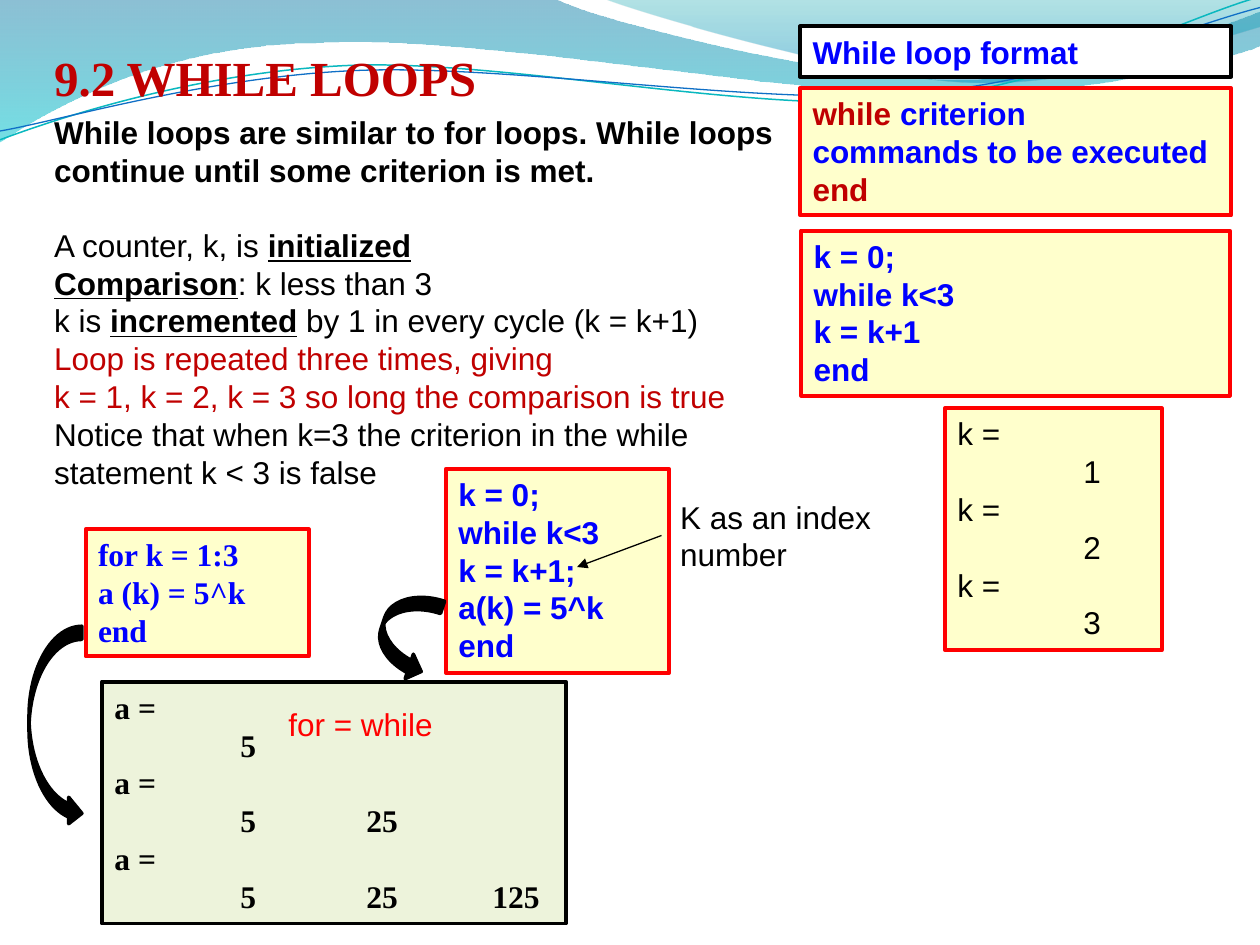
from lxml import etree
from pptx import Presentation
from pptx.dml.color import RGBColor
from pptx.enum.shapes import MSO_CONNECTOR, MSO_SHAPE
from pptx.enum.text import MSO_ANCHOR, MSO_AUTO_SIZE, PP_ALIGN
from pptx.oxml.ns import qn
from pptx.util import Inches, Pt

BLACK, BLUE, RED, DARK_RED = "000000", "0000FF", "FF0000", "C00000"
YELLOW, GREEN, WHITE = "FFFFCC", "EDF3DB", "FFFFFF"
SANS, SERIF = "Arial", "Times New Roman"

BOLD = {"bold": True}
KEYWORD = {"bold": True, "underline": True}
DARK = {"color": DARK_RED}

# A paragraph is a string or a list of (text, format) runs.
TITLE = ["9.2 WHILE LOOPS"]
BODY = [
    [("While loops are similar to for loops. While loops continue until some criterion is met.", BOLD)],
    [("A counter, k, is ", {}), ("initialized", KEYWORD)],
    [("Comparison", KEYWORD), (": k less than 3", {})],
    [("k is ", {}), ("incremented", KEYWORD), (" by 1 in every cycle (k = k+1)", {})],
    [("Loop is repeated three times, giving", DARK)],
    [("k = 1, k = 2, k = 3 so long the comparison is true", DARK)],
    "Notice that when k=3 the criterion in the while statement k < 3 is false",
]
CODE = {"name": SANS, "color": BLUE, "bold": True}
FORMAT = [[("while ", DARK), ("criterion", {})], "commands to be executed", [("end", DARK)]]

# left, top, width, height, fill, line, base format, alignment, paragraphs
BOXES = [
    (6.35, 0.7, 3.42, 1.01, YELLOW, RED, CODE, PP_ALIGN.LEFT, FORMAT),
    (6.36, 1.83, 3.4, 1.31, YELLOW, RED, CODE, PP_ALIGN.LEFT,
     ["k = 0;", "while k<3", "k = k+1", "end"]),
    (7.5, 3.24, 1.72, 1.92, YELLOW, RED, {}, PP_ALIGN.LEFT,
     ["k =", "\t1", "k =", "\t2", "k =", "\t3"]),
    (6.35, 0.21, 3.42, 0.4, WHITE, BLACK, CODE, PP_ALIGN.LEFT, ["While loop format"]),
    (3.54, 3.72, 1.77, 1.62, YELLOW, RED, CODE, PP_ALIGN.LEFT,
     ["k = 0;", "while k<3", "k = k+1;", "a(k) = 5^k", "end"]),
    (0.68, 4.2, 1.77, 1.01, YELLOW, RED, {**CODE, "name": SERIF}, PP_ALIGN.JUSTIFY,
     ["for k = 1:3 ", "a (k) = 5^k ", "end"]),
    (0.81, 5.41, 3.68, 1.92, GREEN, BLACK, {"name": SERIF, "bold": True}, PP_ALIGN.JUSTIFY,
     ["a = ", "\t5 ", "a = ", "\t5\t25 ", "a = ", "\t5\t25\t125"]),
]
LABELS = [
    (5.3, 3.9, 1.87, 0.71, BLACK, "K as an index number"),
    (2.19, 5.55, 1.87, 0.4, RED, "for = while"),
]
CURVED_ARROWS = [(0.23, 4.97, 0.42, 1.59, 0), (3.02, 4.69, 0.41, 0.69, 18.4)]

# Outlines: 2 numbers are a line to a point, 6 are a cubic curve.
BANDS = [
    ([(0, -0.01), (4.4, -0.01), (4.76, 0.17, 6.64, 0.63, 7.58, 0.63),
      (8.53, 0.63, 9.58, 0.26, 10, 0.09), (10.01, 0.36),
      (9.83, 0.44, 8.7, 0.76, 7.46, 0.75), (6.22, 0.75, 3.82, 0.28, 2.57, 0.34),
      (1.29, 0.35, 0.46, 0.83, -0.01, 1.13)],
     [(0, "0074A1", 45), (1, "00C6CF", 55)]),
    ([(4.79, -0.01), (5.09, 0.11, 6.82, 0.62, 7.69, 0.65),
      (8.56, 0.69, 9.61, 0.32, 10, 0.21), (10, 0)],
     [(0, "00A1A9", 30), (0.8, "008BBF", 45)]),
]
WAVES = [
    ([(0, 1.11), (0.48, 0.93, 1.58, 0.57, 2.77, 0.52),
      (3.95, 0.47, 5.93, 0.89, 7.13, 0.8), (8.33, 0.71, 9.38, 0.15, 9.98, -0.02)],
     "0AB8BF", 0.85),
    ([(0, 1.04), (0.47, 0.96, 1.64, 0.61, 2.83, 0.56),
      (4.03, 0.51, 5.97, 0.83, 7.17, 0.75), (8.36, 0.67, 9.41, 0.21, 10, 0.06)],
     "0F6FC6", 0.75),
]


def rgb(value):
    return RGBColor.from_string(value)


def place(sp, *box):
    for name, value in zip(("left", "top", "width", "height"), box):
        setattr(sp, name, Inches(value))


def style(sp, fill, line, width):
    sp.shadow.inherit = False
    sp.fill.solid()
    sp.fill.fore_color.rgb = rgb(fill)
    sp.line.color.rgb = rgb(line)
    sp.line.width = Pt(width)


def add_tabs(p, count):
    """Set left tab stops one inch apart."""
    tabs = etree.SubElement(p._p.get_or_add_pPr(), qn("a:tabLst"))
    for n in range(1, count + 1):
        etree.SubElement(tabs, qn("a:tab"), pos=str(Inches(n)), algn="l")


def write(tf, paragraphs, base, align=PP_ALIGN.LEFT, wrap=True):
    """Fill a text frame; run formats override the base format."""
    tf.word_wrap = wrap
    tf.auto_size = MSO_AUTO_SIZE.NONE
    tf.vertical_anchor = MSO_ANCHOR.TOP
    for i, runs in enumerate(paragraphs):
        p = tf.paragraphs[0] if i == 0 else tf.add_paragraph()
        p.alignment = align
        p.space_before = Pt(0)
        if "\t" in runs:
            add_tabs(p, runs.count("\t"))
        for text, extra in [(runs, {})] if isinstance(runs, str) else runs:
            r = p.add_run()
            r.text = text
            values = {"name": SANS, "size": Pt(18), "bold": False, "color": BLACK, **base, **extra}
            r.font.color.rgb = rgb(values.pop("color"))
            for name, value in values.items():
                setattr(r.font, name, value)


def outline(s, segments, close):
    """Build a freeform, joining each three points of a curve into one cubic."""
    points = [(Inches(seg[i]), Inches(seg[i + 1])) for seg in segments for i in range(0, len(seg), 2)]
    builder = s.shapes.build_freeform(*points[0], scale=1.0)
    builder.add_line_segments(points[1:], close=close)
    sp = builder.convert_to_shape()
    sp.shadow.inherit = False
    lines = iter(list(sp._element.iter(qn("a:lnTo"))))
    for seg in segments[1:]:
        first = next(lines)
        if len(seg) == 6:
            curve = etree.Element(qn("a:cubicBezTo"))
            first.addprevious(curve)
            for line in (first, next(lines), next(lines)):
                curve.append(line[0])
                line.getparent().remove(line)
    return sp


def add_background(s):
    for segments, stops in BANDS:
        sp = outline(s, segments, True)
        sp.line.fill.background()
        sp.fill.gradient()
        sp.fill.gradient_angle = 270
        for stop, (position, color, _) in zip(sp.fill.gradient_stops, stops):
            stop.position = position
            stop.color.rgb = rgb(color)
        for clr, (_, _, opacity) in zip(sp._element.spPr.iter(qn("a:srgbClr")), stops):
            etree.SubElement(clr, qn("a:alpha"), val=str(opacity * 1000))
    for segments, color, width in WAVES:
        sp = outline(s, segments, False)
        sp.fill.background()
        sp.line.color.rgb = rgb(color)
        sp.line.width = Pt(width)


def add_heading_and_body(s):
    title, body = s.shapes.title, s.placeholders[1]
    for sp in (title, body):
        s.shapes._spTree.append(sp._element)  # in front of the background
    place(title, 0.33, 0.33, 3.71, 0.57)
    write(title.text_frame, TITLE,
          {"name": SERIF, "size": Pt(28), "color": DARK_RED, "bold": True}, wrap=False)
    place(body, 0.33, 0.85, 5.92, 3.13)
    write(body.text_frame, BODY, {})
    for p in body.text_frame.paragraphs:
        pPr = p._p.get_or_add_pPr()
        pPr.set("marL", "0")
        pPr.set("indent", "0")
        etree.SubElement(pPr, qn("a:buNone"))
    body.text_frame.paragraphs[1].space_before = Pt(21)


def add_pointer(s):
    line = s.shapes.add_connector(MSO_CONNECTOR.STRAIGHT, *map(Inches, (5.25, 4.25, 4.58, 4.5)))
    line.line.color.rgb = rgb(BLACK)
    line.line.width = Pt(0.75)
    etree.SubElement(line.line._get_or_add_ln(), qn("a:tailEnd"), type="triangle")
    etree.SubElement(line._element.spPr, qn("a:effectLst"))


def main():
    prs = Presentation()
    prs.slide_width, prs.slide_height = Inches(10), Inches(7.5)
    s = prs.slides.add_slide(prs.slide_layouts[1])
    add_background(s)
    add_heading_and_body(s)
    for *box, fill, line, base, align, paragraphs in BOXES:
        sp = s.shapes.add_shape(MSO_SHAPE.RECTANGLE, *map(Inches, box))
        style(sp, fill, line, 2.25)
        write(sp.text_frame, paragraphs, base, align)
    for *box, angle in CURVED_ARROWS:
        sp = s.shapes.add_shape(MSO_SHAPE.CURVED_RIGHT_ARROW, *map(Inches, box))
        style(sp, BLACK, BLACK, 2)
        sp.rotation = angle
    for *box, color, text in LABELS:
        sp = s.shapes.add_textbox(*map(Inches, box))
        write(sp.text_frame, [text], {"color": color})
    add_pointer(s)
    prs.save("out.pptx")


if __name__ == "__main__":
    main()
